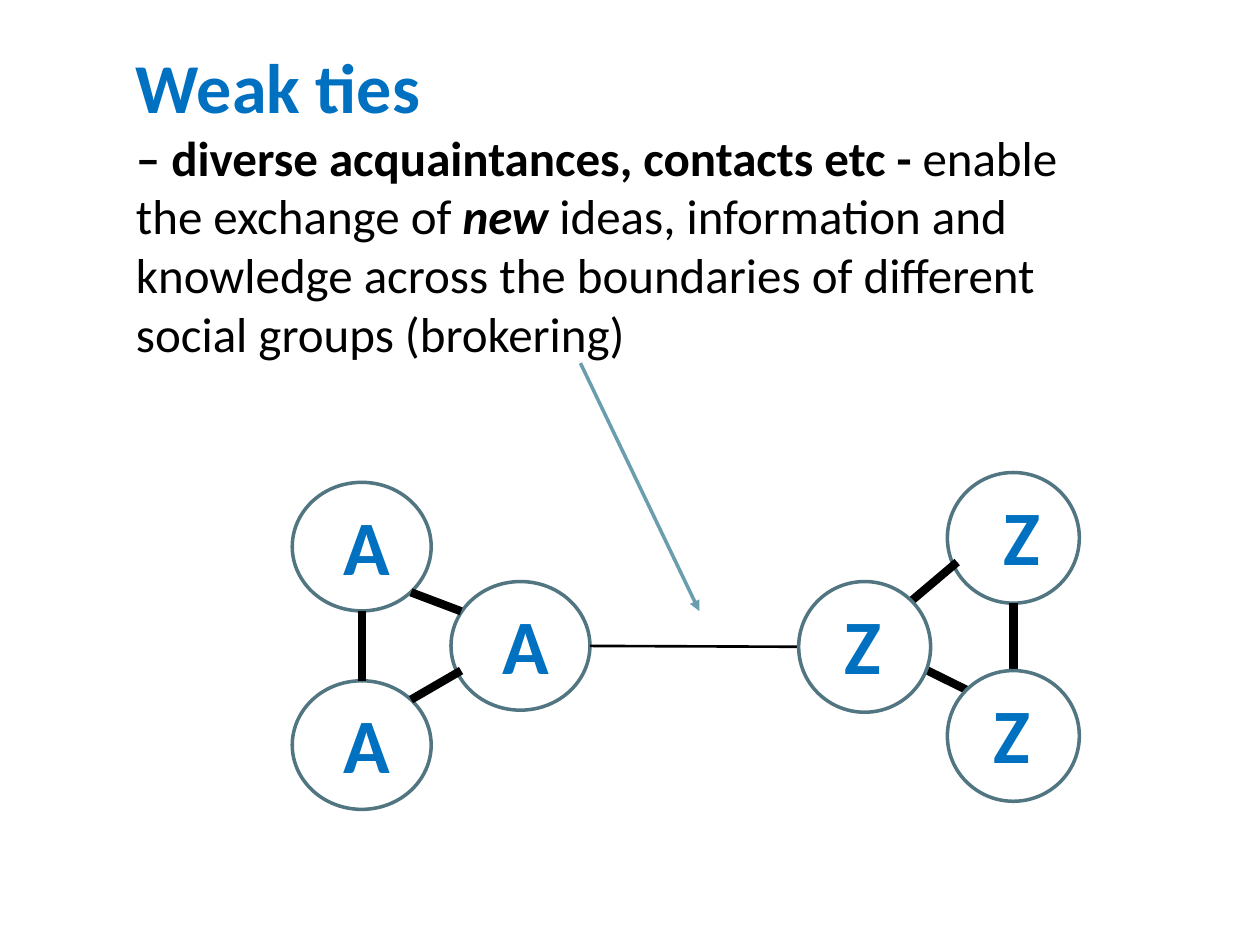
"""Build a slide on weak ties that bridge two social groups."""
from lxml import etree
from pptx import Presentation
from pptx import util as u
from pptx.dml.color import RGBColor
from pptx.enum import shapes, text
from pptx.oxml.ns import qn

COLORS = {"accent": "0070C0", "ink": "000000", "ring": "517682", "pointer": "6A9DAE"}
HEADING = {"size": 40, "bold": True, "italic": False, "color": "accent"}
STRONG = {"size": 28, "bold": True, "italic": False, "color": "ink"}
PLAIN = {**STRONG, "bold": False}
EMPHASIS = {**STRONG, "italic": True}
LABEL = {**HEADING, "size": 44}

TITLE_BOX = (70.5, 21, 550, 191)
TITLE = [
    [("Weak ties", HEADING)],
    [
        ("– diverse acquaintances, contacts etc - ", STRONG),
        ("enable the exchange of ", PLAIN),
        ("new", EMPHASIS),
        (" ideas, information and knowledge across the boundaries of "
         "different social groups (brokering)", PLAIN),
    ],
]

MEMBER_SIZES = {"A": (79.4, 73.5), "Z": (75.4, 74.7)}
LABEL_SIZE = (62.5, 60.5)
LABEL_DROP = 5.6
BACK_MEMBERS = [
    ("A", 167, 275.6, 11.3),
    ("A", 257.7, 332.3, 11.3),
    ("A", 167, 389, 11.3),
    ("Z", 541.4, 270, 11.3),
]
FRONT_MEMBERS = [("Z", 541.4, 383.2, 5.7), ("Z", 456.4, 332.3, 5.7)]

STRONG_TIE = {"color": "ink", "width": 4.75}
WEAK_TIE = {"color": "ink", "width": 1.5}
POINTER = {"color": "pointer", "width": 2, "arrow": True}
TIES = [
    (234.9, 338.5, 263.5, 349.3, STRONG_TIE),
    (234.9, 399.8, 263.5, 383.2, STRONG_TIE),
    (206.7, 349.1, 206.7, 389, STRONG_TIE),
    (520.9, 343.3, 547, 321.2, STRONG_TIE),
    (579.1, 344.7, 579.1, 383.2, STRONG_TIE),
    (530, 383.2, 552.5, 394.3, STRONG_TIE),
    (337.2, 369.1, 456.4, 369.6, WEAK_TIE),
    (331.7, 207.5, 399.6, 349.2, POINTER),
]


def color(name):
    return RGBColor.from_string(COLORS[name])


def points(*values):
    return [u.Pt(value) for value in values]


def write(shape, paragraphs, alignment):
    frame = shape.text_frame
    settings = {
        "word_wrap": True,
        "auto_size": text.MSO_AUTO_SIZE.SHAPE_TO_FIT_TEXT,
        "vertical_anchor": text.MSO_ANCHOR.TOP,
    }
    for name, value in settings.items():
        setattr(frame, name, value)
    for index, runs in enumerate(paragraphs):
        paragraph = frame.add_paragraph() if index else frame.paragraphs[0]
        paragraph.alignment = alignment
        for words, style in runs:
            run = paragraph.add_run()
            run.text = words
            values = {"name": "Calibri", "size": u.Pt(style["size"]),
                      "bold": style["bold"], "italic": style["italic"]}
            for name, value in values.items():
                setattr(run.font, name, value)
            run.font.color.rgb = color(style["color"])


def add_member(slide, group, left, top):
    circle = slide.shapes.add_shape(
        shapes.MSO_SHAPE.OVAL, *points(left, top, *MEMBER_SIZES[group]))
    circle.shadow.inherit = False
    circle.fill.background()
    circle.line.color.rgb = color("ring")
    circle.line.width = u.Pt(2)


def add_tie(slide, x1, y1, x2, y2, style):
    tie = slide.shapes.add_connector(
        shapes.MSO_CONNECTOR.STRAIGHT, *points(x1, y1, x2, y2))
    tie.line.color.rgb = color(style["color"])
    tie.line.width = u.Pt(style["width"])
    if style.get("arrow"):
        etree.SubElement(tie.line._get_or_add_ln(), qn("a:tailEnd"), type="triangle")
    etree.SubElement(tie._element.spPr, qn("a:effectLst"))


def main():
    presentation = Presentation()
    presentation.slide_width, presentation.slide_height = points(720, 540)
    slide = presentation.slides.add_slide(presentation.slide_layouts[5])

    title = slide.shapes.title
    title.left, title.top, title.width, title.height = points(*TITLE_BOX)
    write(title, TITLE, text.PP_ALIGN.LEFT)

    for group, left, top, _ in BACK_MEMBERS:
        add_member(slide, group, left, top)
    for tie in TIES:
        add_tie(slide, *tie)
    for group, left, top, _ in FRONT_MEMBERS:
        add_member(slide, group, left, top)
    for group, left, top, inset in BACK_MEMBERS + FRONT_MEMBERS:
        label = slide.shapes.add_textbox(
            *points(left + inset, top + LABEL_DROP, *LABEL_SIZE))
        write(label, [[(group, LABEL)]], text.PP_ALIGN.CENTER)

    presentation.save("out.pptx")


if __name__ == "__main__":
    main()
